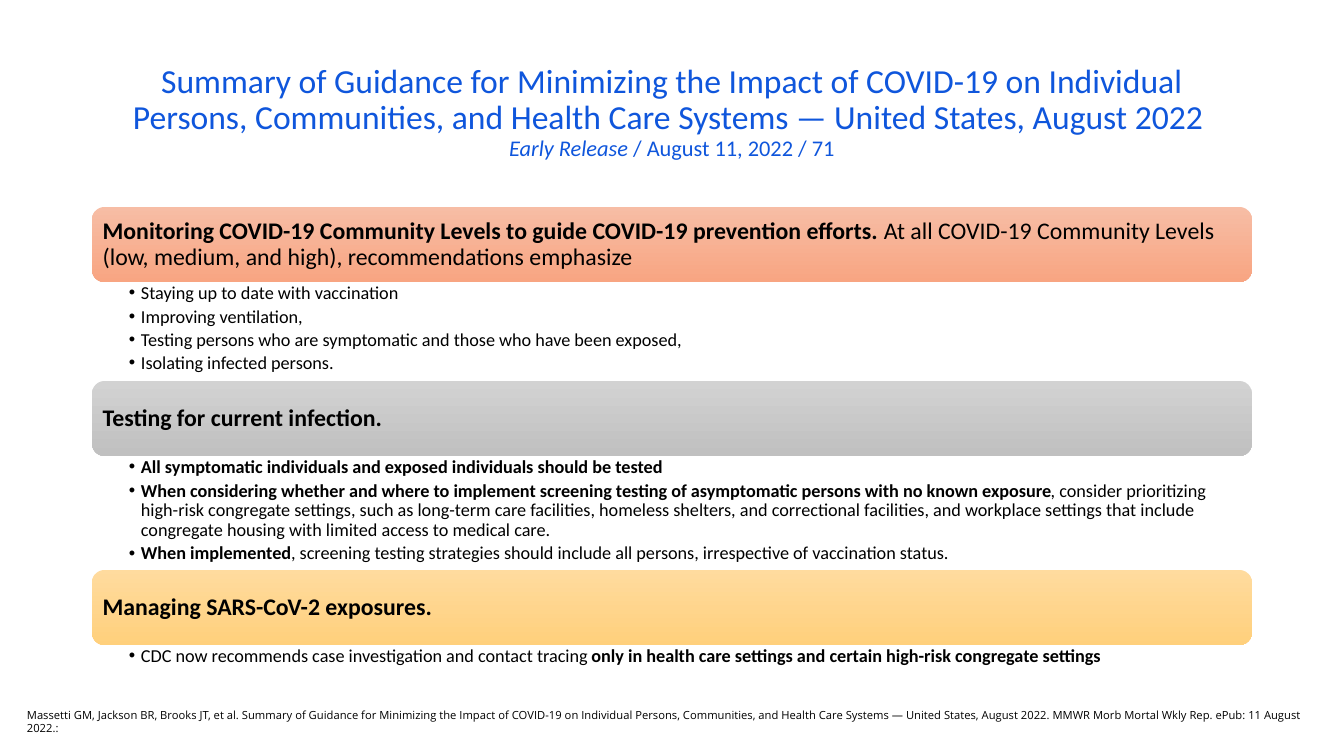
"""Build a slide that summarises the August 2022 COVID-19 guidance in three banded sections."""
from lxml.etree import SubElement
from pptx import Presentation
from pptx.dml.color import RGBColor
from pptx.enum.shapes import MSO_SHAPE
from pptx.enum.text import MSO_ANCHOR, MSO_AUTO_SIZE, PP_ALIGN
from pptx.oxml.ns import qn
from pptx.util import Pt

PX = 914400 / 100.8
COLORS = {
    "title": "0F56DC", "text": "000000",
    "orange_top": "F7BDA5", "orange_bottom": "F8A582",
    "gray_top": "D2D2D2", "gray_bottom": "C0C0C0",
    "gold_top": "FFDB9E", "gold_bottom": "FFD07C",
}
LEFT, WIDTH, BANNER_HEIGHT = 92, 1160, 75
SECTIONS = [
    ("orange", 207, 99,
     [("Monitoring COVID-19 Community Levels to guide COVID-19 prevention efforts. ", True),
      ("At all COVID-19 Community Levels (low, medium, and high), recommendations emphasize", False)],
     [[("Staying up to date with vaccination", False)],
      [("Improving ventilation,", False)],
      [("Testing persons who are symptomatic and those who have been exposed,", False)],
      [("Isolating infected persons.", False)]]),
    ("gray", 381, 115,
     [("Testing for current infection.", True)],
     [[("All symptomatic individuals and exposed individuals should be tested", True)],
      [("When considering whether and where to implement screening testing of asymptomatic "
        "persons with no known exposure", True),
       (", consider prioritizing high-risk congregate settings, such as long-term care "
        "facilities, homeless shelters, and correctional facilities, and workplace settings "
        "that include congregate housing with limited access to medical care.", False)],
      [("When implemented", True),
       (", screening testing strategies should include all persons, irrespective of "
        "vaccination status.", False)]]),
    ("gold", 570, 31,
     [("Managing SARS-CoV-2 exposures.", True)],
     [[("CDC now recommends case investigation and contact tracing ", False),
       ("only in health care settings and certain high-risk congregate settings", True)]]),
]


def px(*lengths):
    return [round(length * PX) for length in lengths]


def write(paragraph, pieces, size, color="text", name="Calibri", spacing=0.9):
    paragraph.line_spacing = spacing
    paragraph.space_before = Pt(0)
    paragraph.font.size = Pt(size)
    paragraph.font.name = name
    paragraph.font.color.rgb = RGBColor.from_string(COLORS[color])
    for text, bold in pieces:
        run = paragraph.add_run()
        run.text = text
        run.font.bold = bold


presentation = Presentation()
presentation.slide_width, presentation.slide_height = px(1344, 756)
slide = presentation.slides.add_slide(presentation.slide_layouts.get_by_name("Comparison"))
title, *list_boxes, spare = slide.placeholders
spare.element.getparent().remove(spare.element)

title.left, title.top, title.width, title.height = px(LEFT, 40, WIDTH, 146)
title.text_frame.auto_size = MSO_AUTO_SIZE.NONE
title.text_frame.vertical_anchor = MSO_ANCHOR.MIDDLE
heading = title.text_frame.paragraphs[0]
heading.alignment = PP_ALIGN.CENTER
write(heading, [("Summary of Guidance for Minimizing the Impact of COVID-19 on Individual Persons, "
                 "Communities, and Health Care Systems — United States, August 2022 ", False)],
      24, "title")
heading.add_line_break()
for text, italic in [("Early Release", True), (" / August 11, 2022 / 71", False)]:
    run = heading.add_run()
    run.text = text
    run.font.size = Pt(16)
    run.font.italic = italic

for list_box, (tint, top, list_height, banner_text, items) in zip(list_boxes, SECTIONS):
    banner = slide.shapes.add_shape(MSO_SHAPE.ROUNDED_RECTANGLE, *px(LEFT, top, WIDTH, BANNER_HEIGHT))
    banner.shadow.inherit = False
    banner.line.fill.background()
    banner.fill.gradient()
    banner.fill.gradient_angle = 270
    for stop, end in zip(banner.fill.gradient_stops, ("top", "bottom")):
        stop.color.rgb = RGBColor.from_string(COLORS[f"{tint}_{end}"])
    frame = banner.text_frame
    frame.vertical_anchor = MSO_ANCHOR.MIDDLE
    frame.margin_left, frame.margin_right = px(7, 7)
    frame.paragraphs[0].alignment = PP_ALIGN.LEFT
    write(frame.paragraphs[0], banner_text, 17)

    list_box.left, list_box.top, list_box.width, list_box.height = px(
        LEFT, top + BANNER_HEIGHT, WIDTH, list_height)
    frame = list_box.text_frame
    frame.auto_size = MSO_AUTO_SIZE.NONE
    frame.vertical_anchor = MSO_ANCHOR.TOP
    frame.margin_left, frame.margin_top, frame.margin_right, frame.margin_bottom = px(37, 2, 13, 2)
    for number, pieces in enumerate(items):
        paragraph = frame.add_paragraph() if number else frame.paragraphs[0]
        properties = paragraph._p.get_or_add_pPr()
        indent, = px(12)
        properties.set("marL", str(indent))
        properties.set("indent", str(-indent))
        SubElement(properties, qn("a:buFont"), typeface="Arial")
        SubElement(properties, qn("a:buChar"), char="•")
        write(paragraph, pieces, 13)
        paragraph.space_after = Pt(2.6)

citation = slide.shapes.add_textbox(*px(17, 703, 1315, 36))
citation.text_frame.word_wrap = True
write(citation.text_frame.paragraphs[0],
      [("Massetti GM, Jackson BR, Brooks JT, et al. Summary of Guidance for Minimizing the Impact of "
        "COVID-19 on Individual Persons, Communities, and Health Care Systems — United States, "
        "August 2022. MMWR Morb Mortal Wkly Rep. ePub: 11 August 2022.:", False)],
      8, name="Open Sans", spacing=1)

presentation.save("out.pptx")
